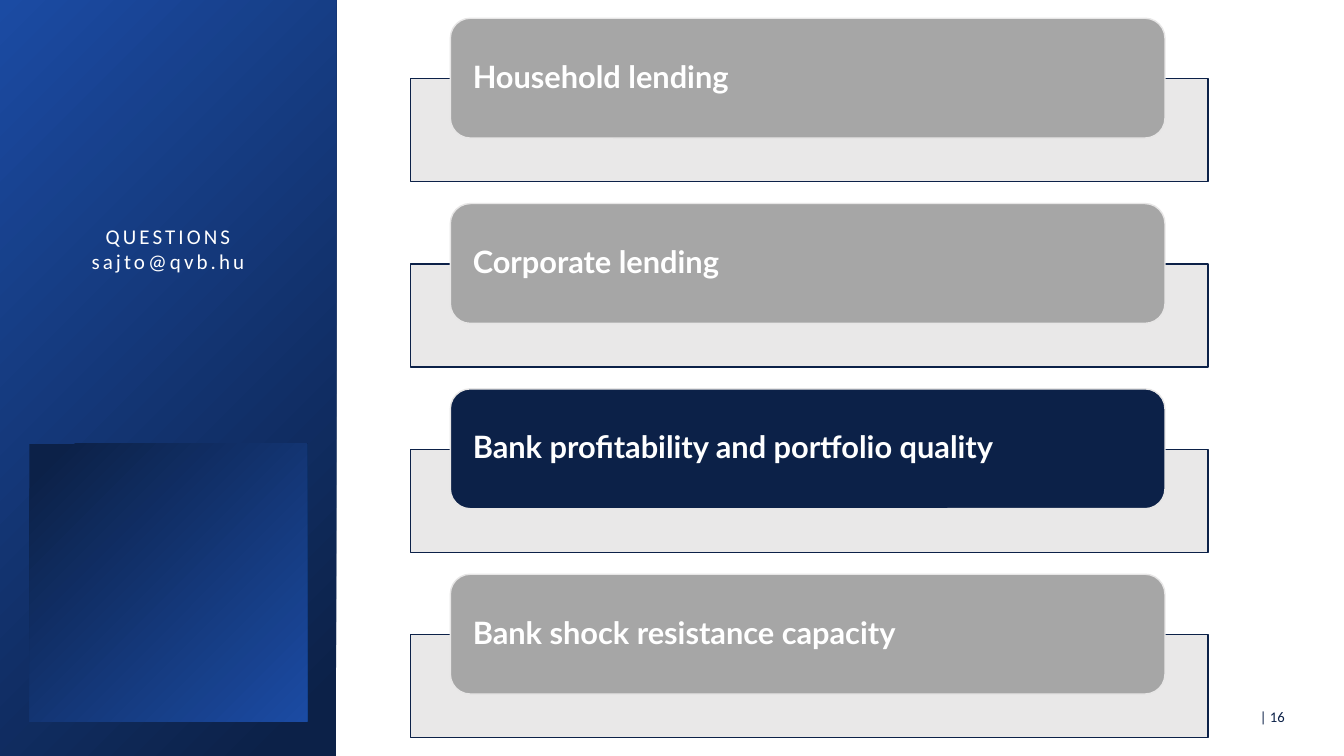
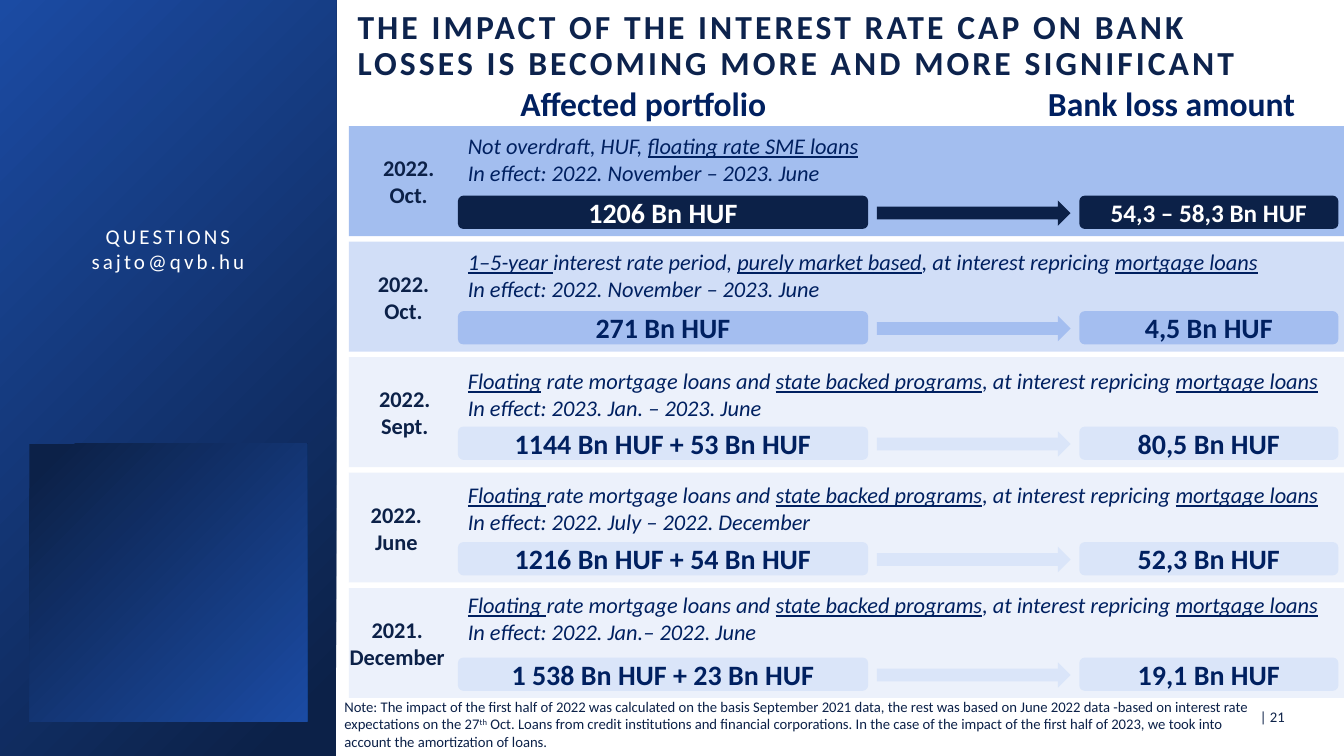
from dataclasses import dataclass

from lxml.etree import SubElement
from pptx import Presentation
from pptx.dml.color import RGBColor
from pptx.enum.shapes import MSO_SHAPE
from pptx.enum.text import MSO_ANCHOR, MSO_AUTO_SIZE, PP_ALIGN
from pptx.oxml.ns import qn
from pptx.util import Cm, Pt

NAVY = RGBColor(0x0C, 0x21, 0x48)
ROYAL = RGBColor(0x1B, 0x4B, 0xA3)
TITLE_NAVY = RGBColor(0x0D, 0x23, 0x4D)
INK = RGBColor(0x00, 0x20, 0x60)
BLUE = RGBColor(0x48, 0x7E, 0xE1)
SKY = RGBColor(0xA4, 0xBE, 0xF0)
PALE = RGBColor(0xDA, 0xE5, 0xF9)
GREY = RGBColor(0xA6, 0xA6, 0xA6)
LIGHT_GREY = RGBColor(0xE7, 0xE6, 0xE6)
WHITE = RGBColor(0xFF, 0xFF, 0xFF)

BODY_FONT, AGENDA_FONT = "Calibri", "Lato"
SLIDE_W, SLIDE_H = 33.87, 19.05
TRACKING = 2.2

AGENDA = ["Household lending", "Corporate lending",
          "Bank profitability and portfolio quality", "Bank shock resistance capacity"]
CURRENT_TOPIC = 2


@dataclass
class Measure:
    date: str
    date_center: float
    text_top: float
    scope: str  # underscores enclose underlined words
    period: str
    portfolio: str
    loss: str
    band: RGBColor = PALE
    accent: RGBColor = PALE
    ink: RGBColor = INK
    loss_size: int = 20


STATE_BACKED = ("rate mortgage loans and _state backed programs_, "
                "at interest repricing _mortgage loans_")
MEASURES = [
    Measure("2022.\nOct.", 1.51, 0.03, "Not overdraft, HUF, _floating rate SME loans_",
            "In effect: 2022. November – 2023. June", "1206 Bn HUF", "54,3 – 58,3 Bn HUF",
            BLUE, NAVY, WHITE, 18),
    Measure("2022.\nOct.", 1.38, 0.05,
            "_1–5-year _interest rate period, _purely market based_, "
            "at interest repricing _mortgage loans_",
            "In effect: 2022. November – 2023. June", "271 Bn HUF", "4,5 Bn HUF", SKY, SKY),
    Measure("2022.\nSept.", 1.41, 0.13, "_Floating_ " + STATE_BACKED,
            "In effect: 2023. Jan. – 2023. June", "1144 Bn HUF + 53 Bn HUF", "80,5 Bn HUF"),
    Measure("2022.\nJune", 1.2, 0.1, "_Floating _" + STATE_BACKED,
            "In effect: 2022. July – 2022. December", "1216 Bn HUF + 54 Bn HUF", "52,3 Bn HUF"),
    Measure("2021.\nDecember", 1.22, -0.05, "_Floating _" + STATE_BACKED,
            "In effect: 2022. Jan.– 2022. June", "1 538 Bn HUF + 23 Bn HUF", "19,1 Bn HUF"),
]


def place(shape, x, y, w, h):
    shape.left, shape.top, shape.width, shape.height = Cm(x), Cm(y), Cm(w), Cm(h)


def set_insets(tf, horizontal, vertical):
    tf.margin_left = tf.margin_right = Cm(horizontal)
    tf.margin_top = tf.margin_bottom = Cm(vertical)


def style(p, size, color, bold=False, italic=False, name=BODY_FONT, align=PP_ALIGN.LEFT):
    p.alignment = align
    font = p.font
    font.name, font.size, font.bold, font.italic = name, Pt(size), bold, italic
    font.color.rgb = color


def track(p):
    """Spread the letters of a paragraph."""
    for r in p.runs:
        r.font._element.set("spc", str(round(TRACKING * 100)))


def add_box(s, kind, x, y, w, h, fill, line=None, opacity=None):
    sp = s.shapes.add_shape(kind, Cm(x), Cm(y), Cm(w), Cm(h))
    sp.shadow.inherit = False
    sp.fill.solid()
    sp.fill.fore_color.rgb = fill
    if opacity is not None:
        color = sp._element.spPr.find(qn("a:solidFill"))[0]
        SubElement(color, qn("a:alpha"), val=str(opacity * 1000))
    if line is None:
        sp.line.fill.background()
    else:
        sp.line.color.rgb = line
        sp.line.width = Pt(1)
    return sp


def add_gradient_box(s, x, y, w, h, rotation=0):
    sp = add_box(s, MSO_SHAPE.RECTANGLE, x, y, w, h, NAVY)
    sp.fill.gradient()
    sp.fill.gradient_angle = 135
    for stop, position, color in zip(sp.fill.gradient_stops, (0.06, 1), (NAVY, ROYAL)):
        stop.position = position
        stop.color.rgb = color
    sp.rotation = rotation


def add_text(s, x, y, w, h, text, size, color, anchor=MSO_ANCHOR.TOP, **look):
    tf = s.shapes.add_textbox(Cm(x), Cm(y), Cm(w), Cm(h)).text_frame
    tf.word_wrap = True
    tf.vertical_anchor = anchor
    tf.text = text
    for p in tf.paragraphs:
        style(p, size, color, **look)
    return tf


def add_frame(s, number):
    """Draw the side panel, contact and page number common to all slides."""
    add_gradient_box(s, 0, 0, 8.47, SLIDE_H)
    add_gradient_box(s, 0.74, 11.18, 7, 7, rotation=180)
    contact = add_text(s, 1.02, 5.51, 6.43, 1.55, "QUESTIONS\nsajto@qvb.hu", 15, WHITE,
                       align=PP_ALIGN.CENTER)
    for p in contact.paragraphs:
        track(p)
    add_text(s, 30.96, 17.53, 1.75, 1.04, f"| {number} ", 10.5, NAVY, MSO_ANCHOR.MIDDLE,
             align=PP_ALIGN.RIGHT)


def add_topic(s, x, y, w, text, fill):
    add_box(s, MSO_SHAPE.RECTANGLE, x, y + 1.52, w, 2.6, LIGHT_GREY, NAVY, opacity=90)
    sp = add_box(s, MSO_SHAPE.ROUNDED_RECTANGLE, x + 1.01, y, w - 2.09, 3.02, fill, LIGHT_GREY)
    tf = sp.text_frame
    tf.word_wrap = True
    tf.vertical_anchor = MSO_ANCHOR.MIDDLE
    set_insets(tf, 0.42, 0)
    tf.text = text
    p = tf.paragraphs[0]
    p.line_spacing = 0.9
    style(p, 22, WHITE, bold=True, name=AGENDA_FONT)


def add_agenda_slide(prs, number):
    s = prs.slides.add_slide(prs.slide_layouts[6])
    add_frame(s, number)
    for i, topic in enumerate(AGENDA):
        add_topic(s, 10.34, 0.46 + 4.67 * i, 20.1, topic, NAVY if i == CURRENT_TOPIC else GREY)


def add_amount(s, x, y, w, text, size, measure):
    sp = add_box(s, MSO_SHAPE.ROUNDED_RECTANGLE, x, y, w, 0.84, measure.accent)
    tf = sp.text_frame
    tf.vertical_anchor = MSO_ANCHOR.MIDDLE
    set_insets(tf, 0.1, 0)
    tf.text = text
    style(tf.paragraphs[0], size, measure.ink, bold=True, align=PP_ALIGN.CENTER)


def add_measure(s, x, y, w, h, measure):
    add_box(s, MSO_SHAPE.RECTANGLE, x, y, w, h, measure.band, opacity=50)
    date_w = 3.2
    add_text(s, x + measure.date_center - date_w / 2, y + 0.59, date_w, 1.62, measure.date,
             16, NAVY, bold=True, align=PP_ALIGN.CENTER)

    tf = add_text(s, x + 2.75, y + measure.text_top, 22.23, 1.62, "\n" + measure.period,
                  16, INK, italic=True)
    for i, part in enumerate(measure.scope.split("_")):
        if part:
            r = tf.paragraphs[0].add_run()
            r.text = part
            r.font.underline = i % 2 == 1

    add_amount(s, x + 2.75, y + 1.75, 10.34, measure.portfolio, 20, measure)
    add_box(s, MSO_SHAPE.RIGHT_ARROW, x + 13.31, y + 1.87, 4.88, 0.64, measure.accent)
    add_amount(s, x + 18.41, y + 1.75, 6.53, measure.loss, measure.loss_size, measure)


def add_title(s, x, y, w, h, text):
    title = s.shapes.title
    place(title, x, y, w, h)
    tf = title.text_frame
    tf.word_wrap = True
    tf.auto_size = MSO_AUTO_SIZE.NONE
    tf.vertical_anchor = MSO_ANCHOR.MIDDLE
    set_insets(tf, 0.2, 0.1)
    tf.text = text
    p = tf.paragraphs[0]
    p.line_spacing = 0.9
    style(p, 24, TITLE_NAVY, bold=True)
    track(p)


def add_note(s, x, y, w, h):
    tf = add_text(s, x, y, w, h, "", 10.5, NAVY)
    p = tf.paragraphs[0]
    for text, baseline in (
        ("Note: The impact of the first half of 2022 was calculated on the basis September 2021 "
         "data, the rest was based on June 2022 data -based on interest rate expectations on "
         "the 27", 0),
        ("th", 30),
        (" Oct. Loans from credit institutions and financial corporations. In the case of the "
         "impact of the first half of 2023, we took into account the amortization of loans.", 0),
    ):
        r = p.add_run()
        r.text = text
        if baseline:
            r.font._element.set("baseline", str(baseline * 1000))


def add_losses_slide(prs, number):
    s = prs.slides.add_slide(prs.slide_layouts[5])
    add_frame(s, number)
    add_title(s, 8.81, 0.25, 23.7, 1.85, "THE IMPACT OF THE INTEREST RATE CAP ON BANK LOSSES "
              "IS BECOMING MORE AND MORE SIGNIFICANT")
    for x, w, heading in ((12.62, 7.19, "Affected portfolio"), (25.32, 8.41, "Bank loss amount")):
        add_text(s, x, 1.9, w, 1.42, heading, 24, INK, MSO_ANCHOR.MIDDLE, bold=True,
                 align=PP_ALIGN.CENTER)
    left = 8.79
    for i, measure in enumerate(MEASURES):
        add_measure(s, left, 3.18 + 2.91 * i, SLIDE_W - left, 2.77, measure)
    add_note(s, 8.43, 17.45, 23.29, 1.6)


def main():
    prs = Presentation()
    prs.slide_width, prs.slide_height = Cm(SLIDE_W), Cm(SLIDE_H)
    add_agenda_slide(prs, 16)
    add_losses_slide(prs, 21)
    prs.save("out.pptx")


if __name__ == "__main__":
    main()
